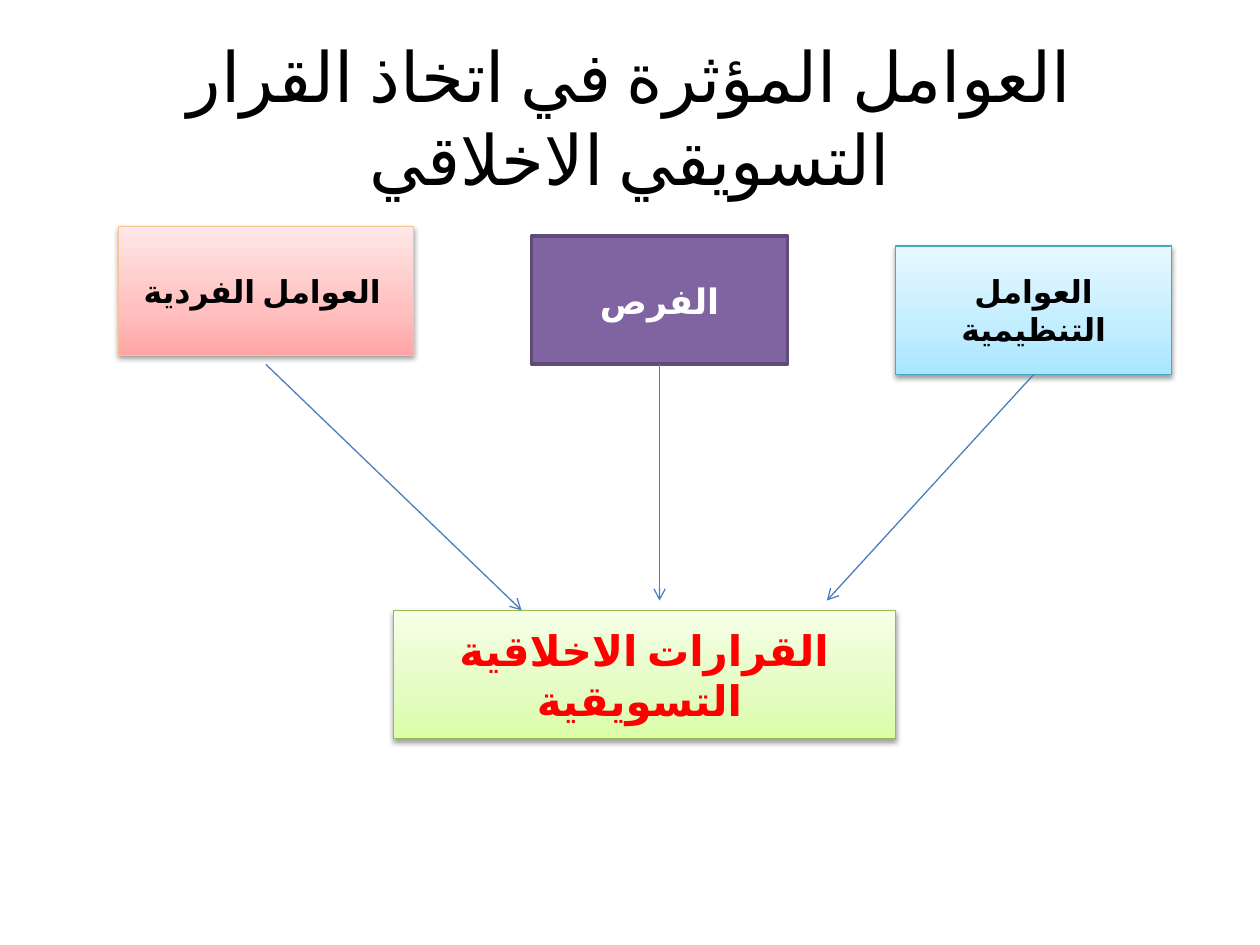
from lxml import etree
from pptx import Presentation
from pptx.dml.color import RGBColor
from pptx.enum.lang import MSO_LANGUAGE_ID
from pptx.enum.shapes import MSO_CONNECTOR, MSO_SHAPE
from pptx.enum.text import MSO_ANCHOR, PP_ALIGN
from pptx.oxml import parse_xml
from pptx.oxml.ns import nsdecls, qn
from pptx.util import Pt

RECTANGLE = MSO_SHAPE.RECTANGLE
STRAIGHT = MSO_CONNECTOR.STRAIGHT
MIDDLE = MSO_ANCHOR.MIDDLE
CENTER = PP_ALIGN.CENTER
ARABIC = MSO_LANGUAGE_ID.ARABIC
BOTTOM_SIDE = 2

FONT = "Calibri"
BOX_HEIGHT = 73.4
GRADIENT_STOPS = (0, 35, 100)
COLORS = {
    "black": "000000", "white": "FFFFFF", "red": "FF0000",
    "arrow": "4B7EBC",
    "individual_line": "FAC090", "organizational_line": "46AAC5",
    "opportunity": "8064A2", "opportunity_line": "5F4A78",
    "decision_line": "98B955",
}
# Gradients run from the bottom edge to the top edge
GRADIENTS = {
    "individual": ("FFA6A5", "FFC0BF", "FFE7E7"),
    "organizational": ("A7E6FF", "C1EDFF", "E7F8FF"),
    "decision": ("DAFDA7", "E4FCC2", "F5FFE7"),
}


def rgb(name):
    return RGBColor.from_string(COLORS[name])


def write_text(shape, text, size, color="black", bold=False):
    frame = shape.text_frame
    frame.word_wrap = True
    frame.vertical_anchor = MIDDLE
    paragraph = frame.paragraphs[0]
    paragraph.alignment = CENTER
    run = paragraph.add_run()
    run.text = text
    run.font.name = FONT
    run.font.size = Pt(size)
    run.font.bold = bold
    run.font.color.rgb = rgb(color)
    run.font.language_id = ARABIC
    # Arabic letters take the complex-script font
    etree.SubElement(run._r.get_or_add_rPr(), qn("a:cs"), typeface=FONT)


def fill_gradient(shape, colors):
    shape.fill.gradient()
    shape.fill.gradient_angle = 90  # counter-clockwise: upwards
    stops = shape.fill._fill._gradFill.find(qn("a:gsLst"))
    for stop in list(stops):
        stops.remove(stop)
    for position, color in zip(GRADIENT_STOPS, colors):
        stops.append(parse_xml(
            f'<a:gs {nsdecls("a")} pos="{position * 1000}">'
            f'<a:srgbClr val="{color}"/></a:gs>'))


def add_soft_shadow(shape):
    effects = shape._element.spPr.find(qn("a:effectLst"))
    effects.append(parse_xml(
        f'<a:outerShdw {nsdecls("a")} blurRad="{Pt(3.1)}" dist="{Pt(1.6)}" '
        'dir="5400000" rotWithShape="0"><a:srgbClr val="000000">'
        '<a:alpha val="38000"/></a:srgbClr></a:outerShdw>'))


def add_box(slide, left, top, width, text, size, line, line_width=0.75,
            gradient=None, fill=None, color="black"):
    box = slide.shapes.add_shape(
        RECTANGLE, Pt(left), Pt(top), Pt(width), Pt(BOX_HEIGHT))
    box.shadow.inherit = False
    box.line.color.rgb = rgb(line)
    box.line.width = Pt(line_width)
    if gradient:
        fill_gradient(box, GRADIENTS[gradient])
        add_soft_shadow(box)
    else:
        box.fill.solid()
        box.fill.fore_color.rgb = rgb(fill)
    write_text(box, text, size, color=color, bold=True)
    return box


def add_arrow(slide, start, end, source=None):
    arrow = slide.shapes.add_connector(STRAIGHT, *map(Pt, start + end))
    if source is not None:
        arrow.begin_connect(source, BOTTOM_SIDE)
    arrow.line.color.rgb = rgb("arrow")
    arrow.line.width = Pt(0.75)
    etree.SubElement(arrow.line._get_or_add_ln(), qn("a:tailEnd"), type="arrow")
    etree.SubElement(arrow._element.spPr, qn("a:effectLst"))


def main():
    presentation = Presentation()
    presentation.slide_width, presentation.slide_height = Pt(720), Pt(540)
    slide = presentation.slides.add_slide(presentation.slide_layouts[6])

    # Title
    title = slide.shapes.add_textbox(Pt(36), Pt(21.6), Pt(648), Pt(90))
    write_text(title, "العوامل المؤثرة في اتخاذ القرار التسويقي الاخلاقي", 39.6)

    # Factors
    add_box(slide, 67.6, 129.6, 168.6, "العوامل الفردية ", 18,
            "individual_line", gradient="individual")
    organizational = add_box(
        slide, 511.8, 140.6, 157.8, "العوامل التنظيمية", 18,
        "organizational_line", gradient="organizational")
    opportunity = add_box(
        slide, 303.8, 134.8, 146.2, "الفرص", 20, "opportunity_line",
        line_width=2, fill="opportunity", color="white")

    # Resulting decisions
    add_box(slide, 224.8, 348.8, 286.8, "القرارات الاخلاقية التسويقية ", 24,
            "decision_line", gradient="decision", color="red")

    # Arrows from the factors to the decisions
    add_arrow(slide, (151.9, 208.2), (298.1, 348.8))
    add_arrow(slide, (376.9, 208.2), (376.9, 343.2), source=opportunity)
    add_arrow(slide, (590.7, 214), (472.5, 343.2), source=organizational)

    presentation.save("out.pptx")


if __name__ == "__main__":
    main()
